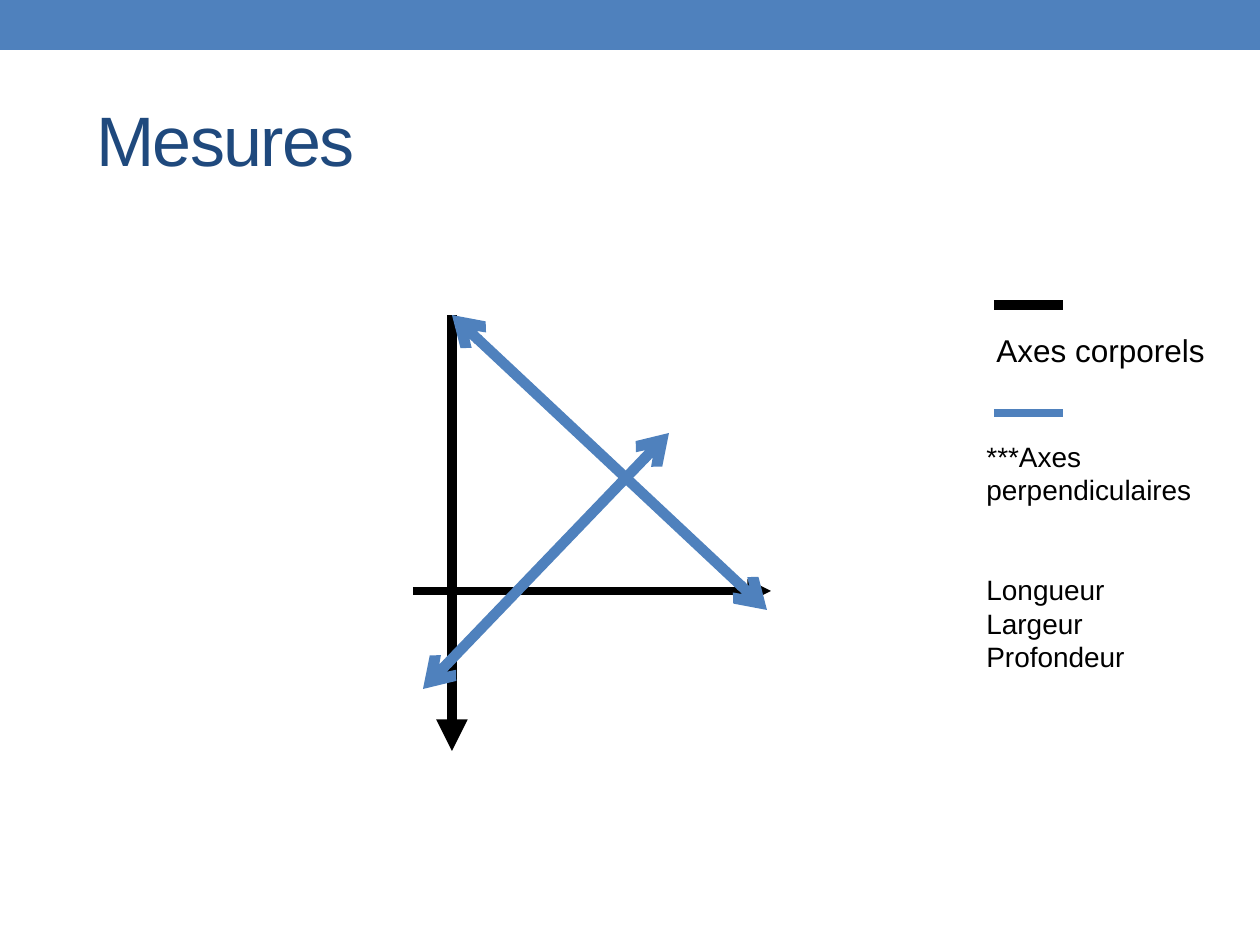
"""Build the "Mesures" slide showing body axes and the axes measured across them."""
from dataclasses import dataclass
from typing import Optional

from lxml.etree import SubElement
from pptx import Presentation
from pptx.dml.color import RGBColor
from pptx.enum.shapes import MSO_CONNECTOR as Connector, MSO_SHAPE as Preset
from pptx.enum.text import MSO_ANCHOR as Anchor, MSO_AUTO_SIZE as AutoSize
from pptx.oxml.ns import qn
from pptx.slide import Slide
from pptx.util import Emu, Pt

SCALE = 914400 / 126


@dataclass(frozen=True)
class Theme:
    font: str = "Arial"
    blue: RGBColor = RGBColor(0x4F, 0x81, 0xBD)
    navy: RGBColor = RGBColor(0x1F, 0x49, 0x7D)
    black: RGBColor = RGBColor(0, 0, 0)
    title_size: float = 40
    legend_size: float = 18
    note_size: float = 16
    thick: float = 6
    thin: float = 4.5


THEME = Theme()


@dataclass(frozen=True)
class Axis:
    start: tuple[int, int]
    end: tuple[int, int]
    color: RGBColor
    width: float
    head: Optional[str] = None
    tail: Optional[str] = None


@dataclass(frozen=True)
class Line:
    text: str
    gap: float = 0


@dataclass(frozen=True)
class Label:
    box: tuple[int, int, int, int]
    lines: tuple[Line, ...]
    size: float
    color: RGBColor = THEME.black
    anchor: Anchor = Anchor.TOP
    fit: AutoSize = AutoSize.SHAPE_TO_FIT_TEXT
    tracking: int = 0


AXES = (
    Axis((452, 315), (452, 751), THEME.black, THEME.thick, tail="triangle"),
    Axis((413, 591), (771, 591), THEME.black, THEME.thin, tail="triangle"),
    Axis((423, 689), (669, 433), THEME.blue, THEME.thick, "arrow", "arrow"),
    Axis((452, 315), (767, 610), THEME.blue, THEME.thick, "arrow", "arrow"),
    Axis((994, 413), (1063, 413), THEME.blue, THEME.thin),
    Axis((994, 305), (1063, 305), THEME.black, THEME.thick),
)

LABELS = (
    Label((84, 66, 1128, 145), (Line("Mesures"),), THEME.title_size, THEME.navy,
          Anchor.MIDDLE, AutoSize.NONE, -100),
    Label((984, 325, 237, 50), (Line("Axes corporels"),), THEME.legend_size),
    Label((974, 433, 246, 251),
          (Line("***Axes perpendiculaires"), Line("Longueur", 38),
           Line("Largeur"), Line("Profondeur")), THEME.note_size),
)


def px(length: int) -> Emu:
    """Turn a pixel length into EMU."""
    return Emu(round(length * SCALE))


def draw_band(slide: Slide) -> None:
    """Draw the coloured band along the top edge."""
    band = slide.shapes.add_shape(Preset.RECTANGLE, 0, 0, px(1260), px(50))
    band.shadow.inherit = False
    band.fill.solid()
    band.fill.fore_color.rgb = THEME.blue
    band.line.fill.background()


def draw_axis(slide: Slide, axis: Axis) -> None:
    """Draw one straight axis with its arrowheads."""
    connector = slide.shapes.add_connector(
        Connector.STRAIGHT, *map(px, axis.start + axis.end))
    connector.line.color.rgb = axis.color
    connector.line.width = Pt(axis.width)
    outline = connector.line._get_or_add_ln()
    for tag, kind in (("a:headEnd", axis.head), ("a:tailEnd", axis.tail)):
        if kind:
            SubElement(outline, qn(tag), type=kind)
    SubElement(connector._element.spPr, qn("a:effectLst"))


def draw_label(slide: Slide, label: Label) -> None:
    """Write one text box, a paragraph for each line."""
    frame = slide.shapes.add_textbox(*map(px, label.box)).text_frame
    frame.word_wrap = True
    frame.auto_size = label.fit
    frame.vertical_anchor = label.anchor
    for index, line in enumerate(label.lines):
        paragraph = frame.add_paragraph() if index else frame.paragraphs[0]
        if line.gap:
            paragraph.space_before = Pt(line.gap)
        run = paragraph.add_run()
        run.text = line.text
        run.font.name = THEME.font
        run.font.size = Pt(label.size)
        run.font.color.rgb = label.color
        if label.tracking:
            run.font._element.set("spc", str(label.tracking))


def main() -> None:
    """Assemble and save the slide."""
    deck = Presentation()
    deck.slide_width, deck.slide_height = px(1260), px(945)
    slide = deck.slides.add_slide(deck.slide_layouts[6])
    draw_band(slide)
    for axis in AXES:
        draw_axis(slide, axis)
    for label in LABELS:
        draw_label(slide, label)
    deck.save("out.pptx")


if __name__ == "__main__":
    main()
